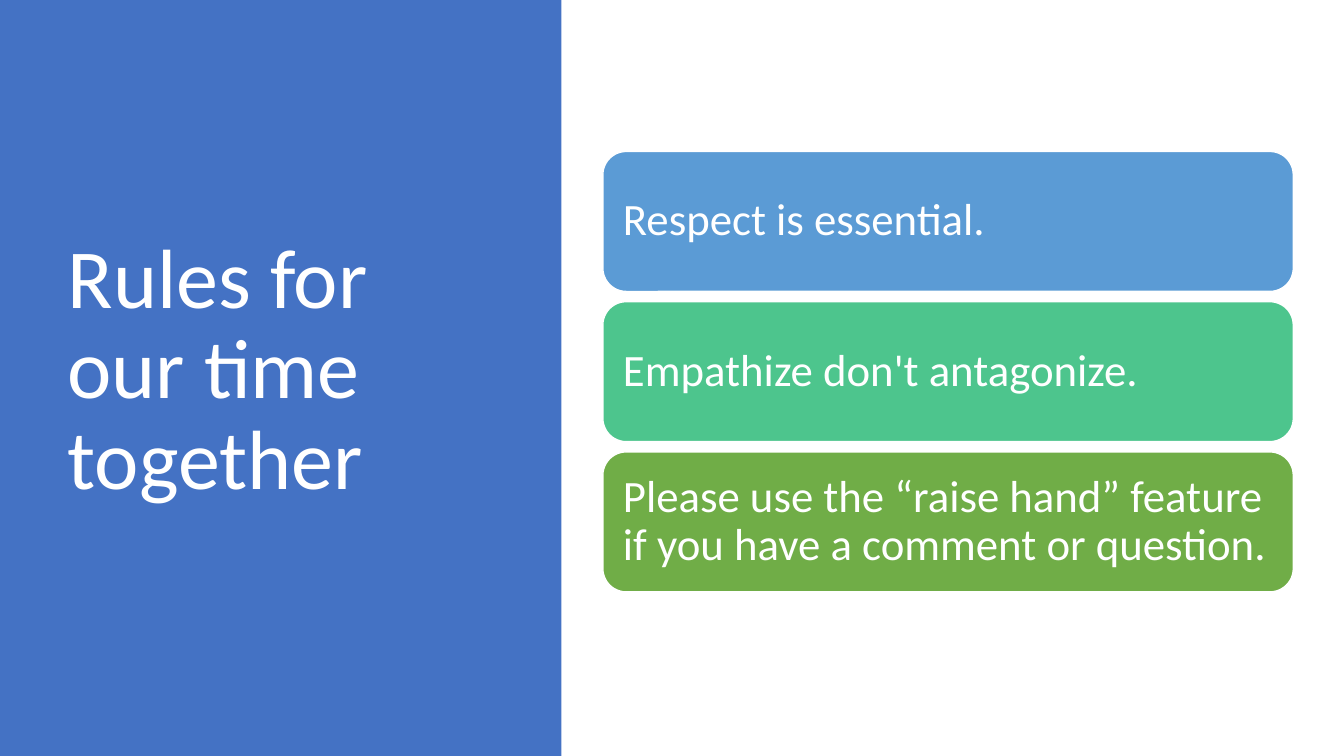
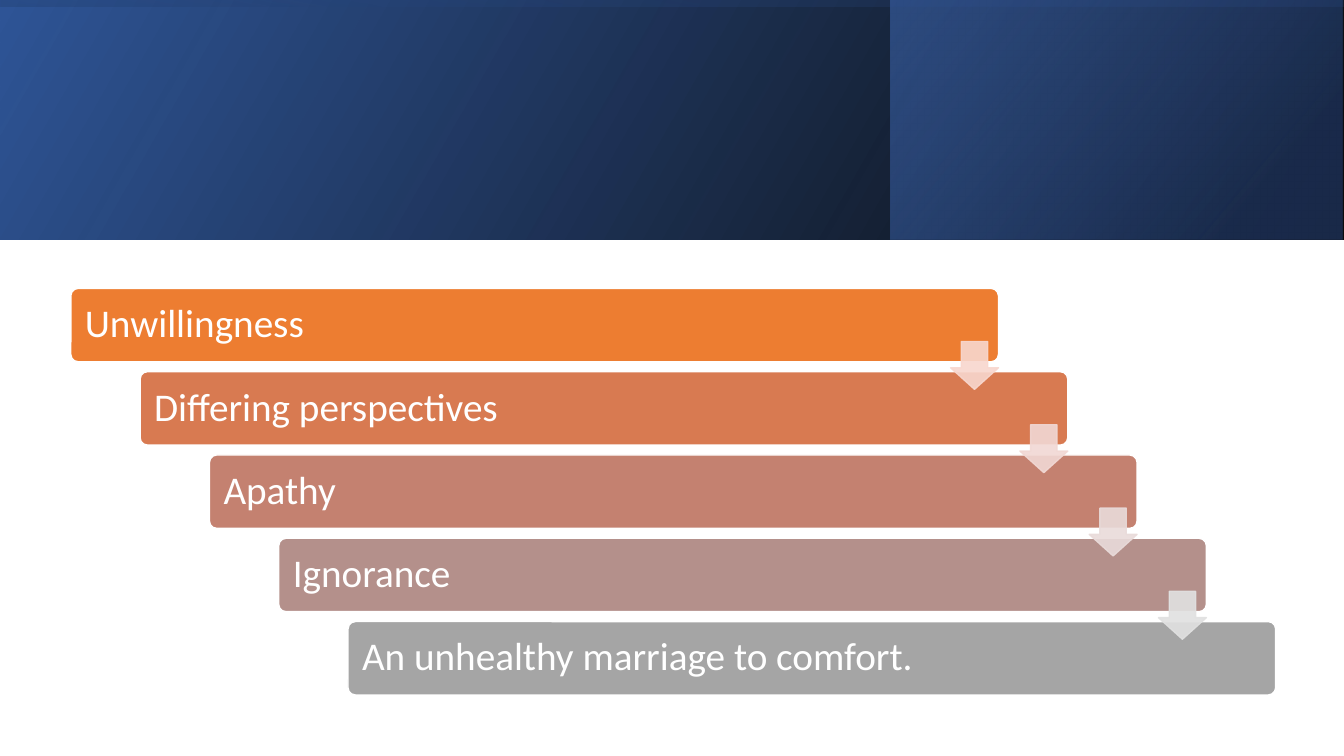
from dataclasses import dataclass

from lxml import etree
from pptx import Presentation
from pptx.dml.color import RGBColor
from pptx.enum.shapes import MSO_SHAPE
from pptx.enum.text import MSO_ANCHOR, PP_ALIGN
from pptx.oxml.ns import qn
from pptx.util import Pt

RECT = MSO_SHAPE.RECTANGLE
ROUND = MSO_SHAPE.ROUNDED_RECTANGLE
ARROW = MSO_SHAPE.DOWN_ARROW
MIDDLE = MSO_ANCHOR.MIDDLE
LEFT = PP_ALIGN.LEFT

FONT = "Calibri"
WIDE, HIGH = 960, 540
BAND = 171

WHITE = RGBColor(0xFF, 0xFF, 0xFF)
BLACK = RGBColor(0x00, 0x00, 0x00)
BLUE = RGBColor(0x44, 0x72, 0xC4)
DEEP = RGBColor(0x2F, 0x55, 0x97)
NAVY = RGBColor(0x20, 0x38, 0x64)
SKY = RGBColor(0x5B, 0x9B, 0xD5)
MINT = RGBColor(0x4D, 0xC5, 0x8D)
GREEN = RGBColor(0x70, 0xAD, 0x47)


@dataclass
class Box:
    left: float
    top: float
    width: float
    height: float

    def shift(self, right: float, down: float) -> "Box":
        return Box(self.left + right, self.top + down, self.width, self.height)

    def points(self) -> tuple:
        return Pt(self.left), Pt(self.top), Pt(self.width), Pt(self.height)


@dataclass
class Stop:
    place: float
    color: RGBColor
    alpha: int = 100


@dataclass
class Blend:
    box: Box
    first: Stop
    last: Stop
    angle: float  # counter-clockwise degrees
    turn: float = 0


@dataclass
class Bar:
    text: str
    color: RGBColor


RULES = [
    Bar("Respect is essential.", SKY),
    Bar("Empathize don't antagonize.", MINT),
    Bar("Please use the “raise hand” feature if you have a comment or question.", GREEN),
]
STEPS = [
    Bar("Unwillingness", RGBColor(0xED, 0x7D, 0x31)),
    Bar("Differing perspectives", RGBColor(0xD8, 0x7A, 0x51)),
    Bar("Apathy", RGBColor(0xC4, 0x81, 0x70)),
    Bar("Ignorance", RGBColor(0xB4, 0x90, 0x8B)),
    Bar("An unhealthy marriage to comfort.", RGBColor(0xA5, 0xA5, 0xA5)),
]
TINTS = [
    RGBColor(0xF8, 0xD7, 0xCE),
    RGBColor(0xF1, 0xD8, 0xD4),
    RGBColor(0xE9, 0xDB, 0xDA),
    RGBColor(0xE1, 0xE1, 0xE1),
]
BLENDS = [
    Blend(Box(0, 0, WIDE, BAND), Stop(0, BLACK, 96), Stop(1, DEEP), 30),
    Blend(Box(636.2, 0, 322.9, BAND), Stop(0.19, NAVY, 68), Stop(1, BLUE, 48), 40),
    # Drawn upright about the centre of the band, then turned to lie along it
    Blend(Box((WIDE - BAND) / 2, (BAND - WIDE) / 2, BAND, WIDE),
          Stop(0.23, DEEP, 16), Stop(0.99, BLACK, 45), 10, turn=270),
]


def put_text(shape, text: str, *, size: float, pad: float = 7.2) -> None:
    frame = shape.text_frame
    frame.word_wrap = True
    frame.vertical_anchor = MIDDLE
    frame.margin_left = frame.margin_right = Pt(pad)
    frame.margin_top = frame.margin_bottom = Pt(3.6)
    line = frame.paragraphs[0]
    line.alignment = LEFT
    line.line_spacing = 0.9
    run = line.add_run()
    run.text = text
    run.font.name = FONT
    run.font.size = Pt(size)
    run.font.color.rgb = WHITE


def set_alpha(color, alpha: int) -> None:
    if alpha < 100:
        etree.SubElement(color, qn("a:alpha"), val=str(alpha * 1000))


def add_shape(slide, kind, box: Box, fill: RGBColor, edge: RGBColor | None = None,
              bends: tuple = (), alpha: int = 100):
    shape = slide.shapes.add_shape(kind, *box.points())
    shape.shadow.inherit = False
    shape.fill.solid()
    shape.fill.fore_color.rgb = fill
    if edge is None:
        shape.line.fill.background()
    else:
        shape.line.color.rgb = edge
        shape.line.width = Pt(1)
    for i, bend in enumerate(bends):
        shape.adjustments[i] = bend
    for color in shape.element.spPr.iter(qn("a:srgbClr")):
        set_alpha(color, alpha)
    return shape


def add_blend(slide, blend: Blend) -> None:
    shape = add_shape(slide, RECT, blend.box, blend.first.color)
    shape.rotation = blend.turn
    shape.element.spPr.xfrm.set("flipH", "1")
    shape.fill.gradient()
    shape.fill.gradient_angle = blend.angle
    ends = (blend.first, blend.last)
    for mark, end in zip(shape.fill.gradient_stops, ends):
        mark.position = end.place
        mark.color.rgb = end.color
    for color, end in zip(shape.element.spPr.iter(qn("a:srgbClr")), ends):
        set_alpha(color, end.alpha)


def add_bars(slide, bars: list[Bar], start: Box, right: float, down: float, *,
             size: float, pad: float, bends: tuple = ()) -> None:
    for i, bar in enumerate(bars):
        box = start.shift(i * right, i * down)
        shape = add_shape(slide, ROUND, box, bar.color, WHITE, bends)
        put_text(shape, bar.text, size=size, pad=pad)


def draw_rules(slide) -> None:
    # Side panel with title
    add_shape(slide, RECT, Box(0, 0, 401, HIGH), BLUE)
    title = slide.shapes.add_textbox(*Box(41.2, 48.8, 299.5, 433.4).points())
    put_text(title, "Rules for our time together", size=60)
    # Stack of rules
    add_bars(slide, RULES, Box(430.6, 108.2, 493.2, 100), 0, 107.3, size=32, pad=9.5)


def draw_steps(slide) -> None:
    # Top band
    for blend in BLENDS:
        add_blend(slide, blend)
    # Stairs and the arrows between them
    right, down = 49.5, 59.5
    add_bars(slide, STEPS, Box(50.6, 206, 662.6, 52.4), right, down,
             size=28, pad=8.5, bends=(0.1,))
    for i, tint in enumerate(TINTS):
        box = Box(679, 243.9, 34.2, 34.2).shift(i * right, i * down)
        add_shape(slide, ARROW, box, tint, tint, (0.55, 0.45), 90)


def main() -> None:
    deck = Presentation()
    deck.slide_width, deck.slide_height = Pt(WIDE), Pt(HIGH)
    blank = deck.slide_layouts[6]
    for draw in (draw_rules, draw_steps):
        draw(deck.slides.add_slide(blank))
    deck.save("out.pptx")


if __name__ == "__main__":
    main()
